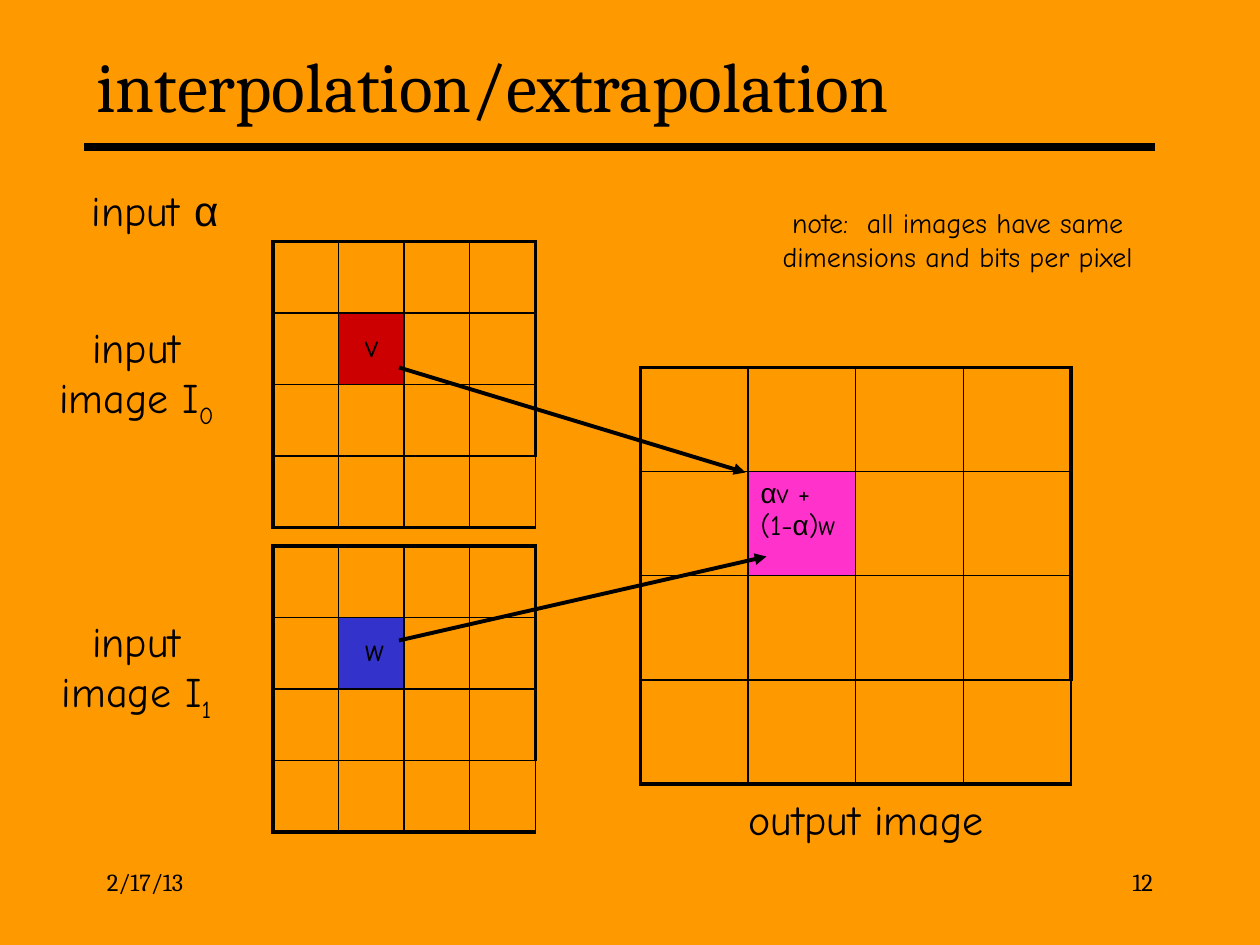
import pptx
import pptx.dml.color
import pptx.enum.shapes
import pptx.enum.text
import pptx.oxml.ns
import pptx.util
from lxml import etree

Pt = pptx.util.Pt
RGBColor = pptx.dml.color.RGBColor
PP_ALIGN = pptx.enum.text.PP_ALIGN
MSO_ANCHOR = pptx.enum.text.MSO_ANCHOR
qn = pptx.oxml.ns.qn

ORANGE = RGBColor(0xFF, 0x99, 0x00)
BLACK = RGBColor(0x00, 0x00, 0x00)
RED = RGBColor(0xCC, 0x00, 0x00)
BLUE = RGBColor(0x33, 0x33, 0xCC)
PINK = RGBColor(0xFF, 0x33, 0xCC)

SERIF, HAND, GREEK = "Cambria", "Comic Neue", "Arial"
GRID = 4
THIN, THICK = 1, 2.25


class SlideBuilder:
    def __init__(self, prs):
        self.slide = prs.slides.add_slide(prs.slide_layouts[5])
        fill = self.slide.background.fill
        fill.solid()
        fill.fore_color.rgb = ORANGE

    def add_runs(self, tf, runs, align=PP_ALIGN.LEFT):
        """Fill a frame with runs of (text, font, size[, baseline])."""
        p = tf.paragraphs[0]
        p.alignment = align
        for text, name, size, *baseline in runs:
            r = p.add_run()
            r.text = text
            for key, value in {"name": name, "size": Pt(size), "bold": False}.items():
                setattr(r.font, key, value)
            r.font.color.rgb = BLACK
            if baseline:
                r.font._element.set("baseline", str(baseline[0]))

    def title(self, text, x, y, w, h):
        sp = self.slide.shapes.title
        sp.left, sp.top, sp.width, sp.height = map(Pt, (x, y, w, h))
        style = {
            "word_wrap": True,
            "auto_size": pptx.enum.text.MSO_AUTO_SIZE.NONE,
            "vertical_anchor": MSO_ANCHOR.MIDDLE,
        }
        for key, value in style.items():
            setattr(sp.text_frame, key, value)
        self.add_runs(sp.text_frame, [(text, SERIF, 40)])

    def text(self, runs, x, y, w, h, align=PP_ALIGN.CENTER, wrap=True):
        tf = self.slide.shapes.add_textbox(*map(Pt, (x, y, w, h))).text_frame
        tf.word_wrap = wrap
        self.add_runs(tf, runs, align)

    def line(self, x1, y1, x2, y2, width, arrow=False):
        cx = self.slide.shapes.add_connector(
            pptx.enum.shapes.MSO_CONNECTOR.STRAIGHT, *map(Pt, (x1, y1, x2, y2)))
        cx.line.color.rgb = BLACK
        cx.line.width = Pt(width)
        if arrow:
            ln = cx._element.spPr.find(qn("a:ln"))
            etree.SubElement(ln, qn("a:tailEnd"), type="triangle")
        etree.SubElement(cx._element.spPr, qn("a:effectLst"))

    def borders(self, cell, widths):
        tcPr = cell._tc.get_or_add_tcPr()
        for side, width in widths.items():
            ln = etree.SubElement(tcPr, qn(f"a:ln{side}"), w=str(Pt(width)))
            fill = etree.SubElement(ln, qn("a:solidFill"))
            etree.SubElement(fill, qn("a:srgbClr"), val=str(BLACK))

    def pixel_grid(self, x, y, col_w, row_h, color, runs):
        """Draw an image as a grid with one coloured, labelled pixel."""
        table = self.slide.shapes.add_table(
            GRID, GRID, *map(Pt, (x, y, GRID * col_w, GRID * row_h))).table
        table.first_row = table.horz_banding = False
        for col in table.columns:
            col.width = Pt(col_w)
        last = GRID - 1
        for i, row in enumerate(table.rows):
            row.height = Pt(row_h)
            for j, cell in enumerate(row.cells):
                thick = {
                    "L": j == 0,
                    "R": j == last and i < last,
                    "T": i == 0,
                    "B": i == last,
                }
                self.borders(cell, {k: THICK if v else THIN for k, v in thick.items()})
                if (i, j) == (1, 1):
                    cell.fill.solid()
                    cell.fill.fore_color.rgb = color
                    self.add_runs(cell.text_frame, runs)
                else:
                    cell.fill.background()


def main():
    prs = pptx.Presentation()
    prs.slide_width, prs.slide_height = Pt(720), Pt(540)
    s = SlideBuilder(prs)

    s.line(48, 84, 660, 84, 4.5)
    s.text([("2/17/13", SERIF, 14)], 54, 492, 150, 36, PP_ALIGN.LEFT)
    s.text([("12", SERIF, 14)], 516, 492, 150, 36, PP_ALIGN.RIGHT)
    s.title("interpolation/extrapolation", 48, 18, 612, 60)

    blend = [("α", GREEK, 16), ("v + (1-", HAND, 16), ("α", GREEK, 16), (")w", HAND, 16)]
    s.pixel_grid(366, 210, 61.5, 59.5, PINK, blend)
    inputs = [("v", "0", RED, 138, 180), ("w", "1", BLUE, 312, 348)]
    for value, index, color, grid_y, label_y in inputs:
        s.pixel_grid(156, grid_y, 37.5, 40.85, color, [(" ", HAND, 24), (value, HAND, 18)])
        s.text([("input image I", HAND, 24), (index, HAND, 24, -25000)],
               24, label_y, 108, 65)

    s.line(228, 210, 426, 270, THICK, arrow=True)
    s.line(228, 366, 438, 318, THICK, arrow=True)

    s.text([("output image", HAND, 24)], 390, 450, 210, 36)
    s.text([("input ", HAND, 24), ("α", GREEK, 24)], 42, 102, 93, 36, wrap=False)
    s.text([("note:  all images have same dimensions and bits per pixel", HAND, 16)],
           426, 114, 242.5, 46)
    prs.save("out.pptx")


if __name__ == "__main__":
    main()
